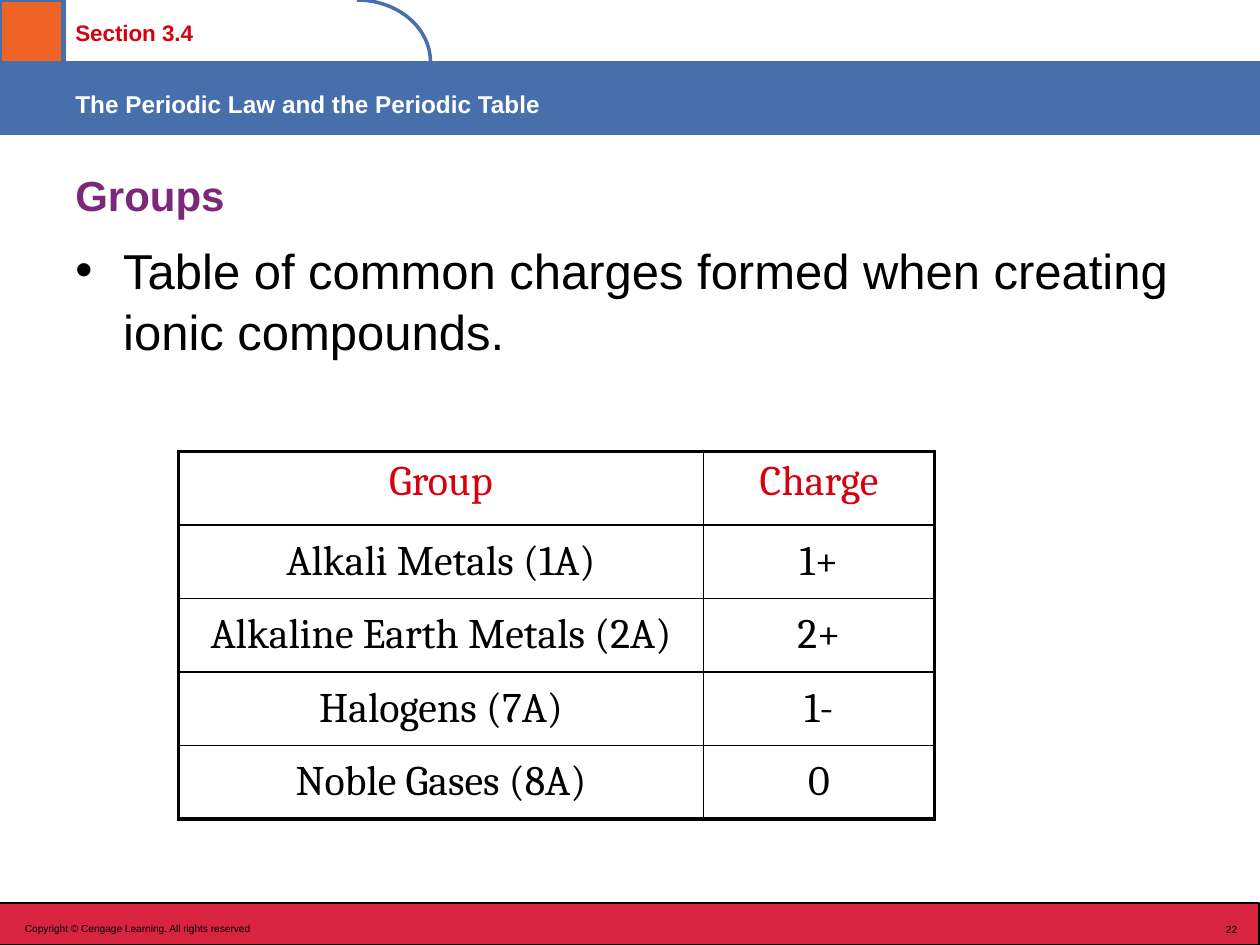
"""Build the periodic-table groups slide on a grid of 120 columns by 90 rows."""
from math import cos, pi, sin

from lxml import etree
from pptx import Presentation
from pptx.dml.color import RGBColor
from pptx.enum.shapes import MSO_SHAPE
from pptx.enum.text import MSO_ANCHOR, PP_ALIGN
from pptx.oxml.ns import qn
from pptx.util import Inches, Pt

RECT = MSO_SHAPE.RECTANGLE
TOP, MIDDLE = MSO_ANCHOR.TOP, MSO_ANCHOR.MIDDLE
LEFT, CENTER, RIGHT = PP_ALIGN.LEFT, PP_ALIGN.CENTER, PP_ALIGN.RIGHT

THEME = {
    "blue": RGBColor.from_string("476FAC"),
    "orange": RGBColor.from_string("F06326"),
    "green": RGBColor.from_string("48A459"),
    "footer": RGBColor.from_string("D92440"),
    "red": RGBColor.from_string("D6000E"),
    "purple": RGBColor.from_string("7C2878"),
    "black": RGBColor.from_string("000000"),
    "white": RGBColor.from_string("FFFFFF"),
    "sans": "Arial", "serif": "Cambria",
    "section": 22, "heading": 24, "body": 28, "small": 10,
    "thin": 1, "thick": 2.25,
}

prs = Presentation()
prs.slide_width, prs.slide_height = Inches(10), Inches(7.5)
U = prs.slide_width // 120
s = prs.slides.add_slide(prs.slide_layouts[6])


def add_run(p, text, size, color, font="sans", bold=False):
    r = p.add_run()
    r.text = text
    r.font.name, r.font.size, r.font.bold = THEME[font], Pt(THEME[size]), bold
    r.font.color.rgb = THEME[color]
    return r


def add_text(box, text, size, color, bold=False, align=LEFT, anchor=TOP, raised=False):
    tf = s.shapes.add_textbox(*(round(v * U) for v in box)).text_frame
    tf.word_wrap = True
    tf.vertical_anchor = anchor
    p = tf.paragraphs[0]
    p.alignment = align
    r = add_run(p, text, size, color, bold=bold)
    if raised:
        r.font._element.set("baseline", "20000")
    return p


bars = [
    ((-0.1, 86, 120, 4), "footer", "black", 0.75),
    ((0, 5.9, 120, 6.9), "blue", "blue", 0.75),
    ((0.1, 0, 6, 6), "green", "blue", 2),
    ((0, 0, 6, 6), "orange", "blue", 2),
]
for box, fill, line, width in bars:
    sp = s.shapes.add_shape(RECT, *(round(v * U) for v in box))
    sp.shadow.inherit = False
    sp.fill.solid()
    sp.fill.fore_color.rgb = THEME[fill]
    sp.line.color.rgb = THEME[line]
    sp.line.width = Pt(width)

STEPS = 32
angles = [i * pi / 2 / STEPS for i in range(STEPS + 1)]
curve = [(round((34 + 7 * sin(a)) * U), round(5.9 * (1 - cos(a)) * U)) for a in angles]
fb = s.shapes.build_freeform(*curve[0])
fb.add_line_segments(curve[1:], close=False)
tab = fb.convert_to_shape()
tab.shadow.inherit = False
tab.fill.background()
tab.line.color.rgb = THEME["blue"]
tab.line.width = Pt(2)

add_text((6, 0.4, 34, 5.6), "Section 3.4", "section", "red", bold=True, raised=True)
add_text((6, 7, 114, 6), "The Periodic Law and the Periodic Table", "heading", "white",
         bold=True, raised=True)
add_text((1.2, 86.9, 77, 3), "Copyright © Cengage Learning. All rights reserved", "small",
         "black", raised=True)
add_text((87, 87, 32, 3), "22", "small", "black", align=RIGHT, raised=True)
add_text((6, 15, 108, 7), "Groups", "heading", "purple", bold=True, anchor=MIDDLE)

p = add_text((6, 22, 108, 12.4),
             "Table of common charges formed when creating ionic compounds.", "body", "black")
p.line_spacing = 1.05
pPr = p._p.get_or_add_pPr()
pPr.set("marL", str(Inches(0.38)))
pPr.set("indent", str(-Inches(0.38)))
etree.SubElement(pPr, qn("a:buFont"), typeface=THEME["sans"])
etree.SubElement(pPr, qn("a:buChar"), char="•")

rows = [
    ("Group", "Charge"),
    ("Alkali Metals (1A)", "1+"),
    ("Alkaline Earth Metals (2A)", "2+"),
    ("Halogens (7A)", "1-"),
    ("Noble Gases (8A)", "0"),
]
widths = (50, 22)
ROW = 7
table = s.shapes.add_table(len(rows), len(widths), 17 * U, 43 * U,
                           sum(widths) * U, ROW * len(rows) * U).table
table.first_row = table.horz_banding = False
for column, width in zip(table.columns, widths):
    column.width = width * U
for i, row in enumerate(rows):
    table.rows[i].height = ROW * U
    for j, text in enumerate(row):
        cell = table.cell(i, j)
        cell.vertical_anchor = MIDDLE if i else TOP
        p = cell.text_frame.paragraphs[0]
        p.alignment = CENTER
        add_run(p, text, "heading", "black" if i else "red", "serif")
        outer = {"lnL": j == 0, "lnR": j == len(widths) - 1,
                 "lnT": i == 0, "lnB": i == len(rows) - 1}
        tcPr = cell._tc.get_or_add_tcPr()
        for side, edge in outer.items():
            width = Pt(THEME["thick" if edge else "thin"])
            ln = etree.SubElement(tcPr, qn(f"a:{side}"), w=str(width))
            fill = etree.SubElement(ln, qn("a:solidFill"))
            etree.SubElement(fill, qn("a:srgbClr"), val=str(THEME["black"]))
        cell.fill.background()

prs.save("out.pptx")
